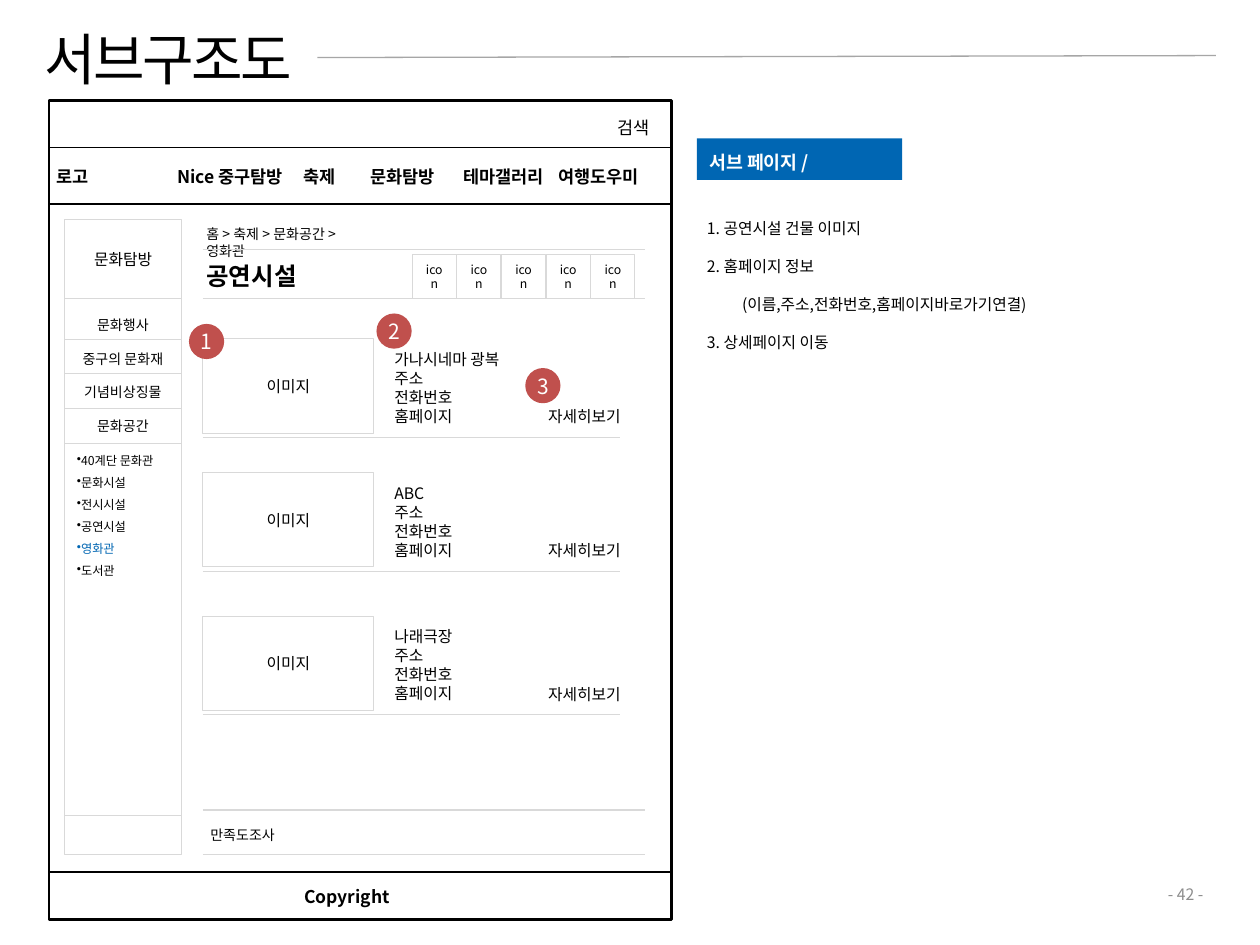
from lxml.etree import SubElement
from pptx import Presentation
from pptx.dml.color import RGBColor
from pptx.enum.shapes import MSO_CONNECTOR, MSO_SHAPE
from pptx.enum.text import MSO_ANCHOR, PP_ALIGN
from pptx.oxml import parse_xml
from pptx.oxml.ns import nsdecls, qn
from pptx.util import Cm, Pt

FONT = "Noto Sans CJK KR"
BLACK, WHITE, GRAY, BLUE, RED = "000000", "FFFFFF", "D9D9D9", "0066B3", "C0504D"
LEFT, CENTER, RIGHT = PP_ALIGN.LEFT, PP_ALIGN.CENTER, PP_ALIGN.RIGHT
TOP, MIDDLE = MSO_ANCHOR.TOP, MSO_ANCHOR.MIDDLE

TITLE = "서브구조도"
NAVIGATION = ["Nice 중구탐방", "축제", "문화탐방", "테마갤러리", "여행도우미"]
NAVIGATION_TABS = [2.54, 3.89, 5.77, 7.67]
MENU = ["문화행사", "중구의 문화재", "기념비상징물", "문화공간"]
SUBMENU = ["40계단 문화관", "문화시설", "전시시설", "공연시설", "영화관", "도서관"]
CURRENT = "영화관"
DETAILS = ["주소", "전화번호", "홈페이지"]
THEATERS = [("가나시네마 광복", 6.83), ("ABC", 9.53), ("나래극장", 12.42)]
MARKERS = [("1", 3.81, 6.53), ("2", 7.59, 6.32), ("3", 10.59, 7.42)]
NOTES = [
    "1. 공연시설 건물 이미지",
    "2. 홈페이지 정보",
    "(이름,주소,전화번호,홈페이지바로가기연결)",
    "3. 상세페이지 이동",
]
LABELS = [
    (["로고"], (0.89, 3.23, 1.6, 0.7), 10, True, LEFT),
    (["Copyright"], (5.89, 17.73, 2.6, 0.7), 10, True, LEFT),
    (["검색"], (12.19, 2.24, 1.4, 0.69), 10, False, LEFT),
    (["홈 > 축제 > 문화공간 > 영화관"], (3.91, 4.42, 3.9, 0.9), 8, False, LEFT),
    (["공연시설"], (3.91, 5.13, 4, 0.86), 14, True, LEFT),
    (["만족도조사"], (3.99, 16.54, 2.2, 0.61), 8, False, LEFT),
]
ICON_COUNT, ICON_LEFT, ICON_STEP, ICON_SIZE = 5, 8.31, 0.9, 0.89
FRAME_LEFT, FRAME_RIGHT = 0.99, 13.54
SIDE_LEFT, SIDE_WIDTH = 1.3, 2.36
BODY_LEFT, BODY_RIGHT, CARD_RIGHT = 4.09, 13, 12.5

deck = Presentation()
deck.slide_width, deck.slide_height = Cm(25.4), Cm(19.05)
page = deck.slides.add_slide(deck.slide_layouts[5])


def color(value):
    return RGBColor.from_string(value)


def write(box, lines, size, ink=BLACK, bold=False, align=LEFT, anchor=TOP, spacing=1):
    frame = box.text_frame
    frame.word_wrap = True
    frame.vertical_anchor = anchor
    frame.text = "\n".join(lines)
    for para in frame.paragraphs:
        para.alignment = align
        para.line_spacing = spacing
        font = para.font
        font.name, font.size, font.bold = FONT, Pt(size), bold
        font.color.rgb = color(ink)
        SubElement(defaults(para), qn("a:ea"), typeface=FONT)
    return frame.paragraphs


def defaults(para):
    return para._p.pPr.find(qn("a:defRPr"))


def label(lines, place, size, bold=False, align=LEFT, **style):
    box = page.shapes.add_textbox(*map(Cm, place))
    return write(box, lines, size, bold=bold, align=align, **style)


def shape(place, fill=None, border=None, width=0.5, kind=MSO_SHAPE.RECTANGLE):
    box = page.shapes.add_shape(kind, *map(Cm, place))
    box.shadow.inherit = False
    if fill:
        box.fill.solid()
        box.fill.fore_color.rgb = color(fill)
    else:
        box.fill.background()
    if border:
        box.line.color.rgb = color(border)
        box.line.width = Pt(width)
    else:
        box.line.fill.background()
    return box


def line(left, top, right, bottom, ink=GRAY, width=0.75):
    rule = page.shapes.add_connector(
        MSO_CONNECTOR.STRAIGHT, Cm(left), Cm(top), Cm(right), Cm(bottom))
    rule.line.color.rgb = color(ink)
    rule.line.width = Pt(width)
    SubElement(rule._element.spPr, qn("a:effectLst"))


title = page.shapes.title
title.left, title.top, title.width, title.height = map(Cm, (0.64, 0.36, 5.77, 1.63))
for para in write(title, [TITLE], 32, anchor=MIDDLE):
    defaults(para).set("spc", "-150")
line(6.4, 1.16, 24.51, 1.12, "A6A6A6")
label(["- 42 -"], (21.41, 17.73, 3.1, 0.61), 9, align=RIGHT, anchor=MIDDLE, ink="8C8C8C")

shape((FRAME_LEFT, 2.03, FRAME_RIGHT - FRAME_LEFT, 16.51), WHITE, BLACK, 1.5)
for top in (2.97, 4.11, 17.58):
    line(FRAME_LEFT, top, FRAME_RIGHT, top, BLACK)
for item in LABELS:
    label(*item)

navigation = label(["\t".join(NAVIGATION)], (3.33, 3.23, 10.2, 0.69), 10, bold=True)[0]
stops = "".join(f'<a:tab pos="{Cm(stop)}" algn="l"/>' for stop in NAVIGATION_TABS)
defaults(navigation).addprevious(
    parse_xml(f'<a:tabLst {nsdecls("a")}>{stops}</a:tabLst>'))

heading = shape((SIDE_LEFT, 4.42, SIDE_WIDTH, 1.6), border=GRAY)
write(heading, ["문화탐방"], 9, align=CENTER, anchor=MIDDLE)
shape((SIDE_LEFT, 6.02, SIDE_WIDTH, 11.2), border=GRAY)
label(MENU, (1.07, 5.92, 2.82, 3), 8, align=CENTER, spacing=2)
for top in [6.83 + 0.7 * row for row in range(len(MENU))] + [16.43]:
    line(SIDE_LEFT, top, SIDE_LEFT + SIDE_WIDTH, top, width=0.25)
for para in label(SUBMENU, (SIDE_LEFT, 8.86, 3.4, 2.95), 7, spacing=1.5):
    defaults(para).addprevious(parse_xml(f'<a:buChar {nsdecls("a")} char="•"/>'))
    if para.text == CURRENT:
        para.font.color.rgb = color(BLUE)

for top in (5.03, 6.02, 16.33, 17.22):
    line(BODY_LEFT, top, BODY_RIGHT, top)
for index in range(ICON_COUNT):
    icon = shape((ICON_LEFT + index * ICON_STEP, 5.13, ICON_SIZE, ICON_SIZE), border=GRAY)
    write(icon, ["icon"], 7, align=CENTER, anchor=MIDDLE)

for name, top in THEATERS:
    photo = shape((BODY_LEFT, top, 3.45, 1.9), border=GRAY)
    write(photo, ["이미지"], 9, align=CENTER, anchor=MIDDLE)
    line(BODY_LEFT, top + 1.99, CARD_RIGHT, top + 1.99)
    label([name, *DETAILS], (7.7, top + 0.1, 4.9, 1.8), 9)
    label(["자세히보기"], (10.8, top + 1.25, 2.59, 0.64), 9)

for number, left, top in MARKERS:
    marker = shape((left, top, 0.71, 0.71), RED, kind=MSO_SHAPE.OVAL)
    frame = marker.text_frame
    frame.margin_left = frame.margin_right = frame.margin_top = frame.margin_bottom = 0
    write(marker, [number], 12, ink=WHITE, align=CENTER, anchor=MIDDLE)

banner = shape((14.05, 2.79, 4.14, 0.84), BLUE)
write(banner, ["서브 페이지 /"], 10.5, ink=WHITE, bold=True, spacing=1.3)
for para in label(NOTES, (14, 3.91, 9.58, 4.11), 9, spacing=2):
    hanging = para.text[0].isdigit()
    para._p.pPr.set("marL", str(Cm(0.64 if hanging else 0.71)))
    para._p.pPr.set("indent", str(Cm(-0.64 if hanging else 0)))

deck.save("out.pptx")
